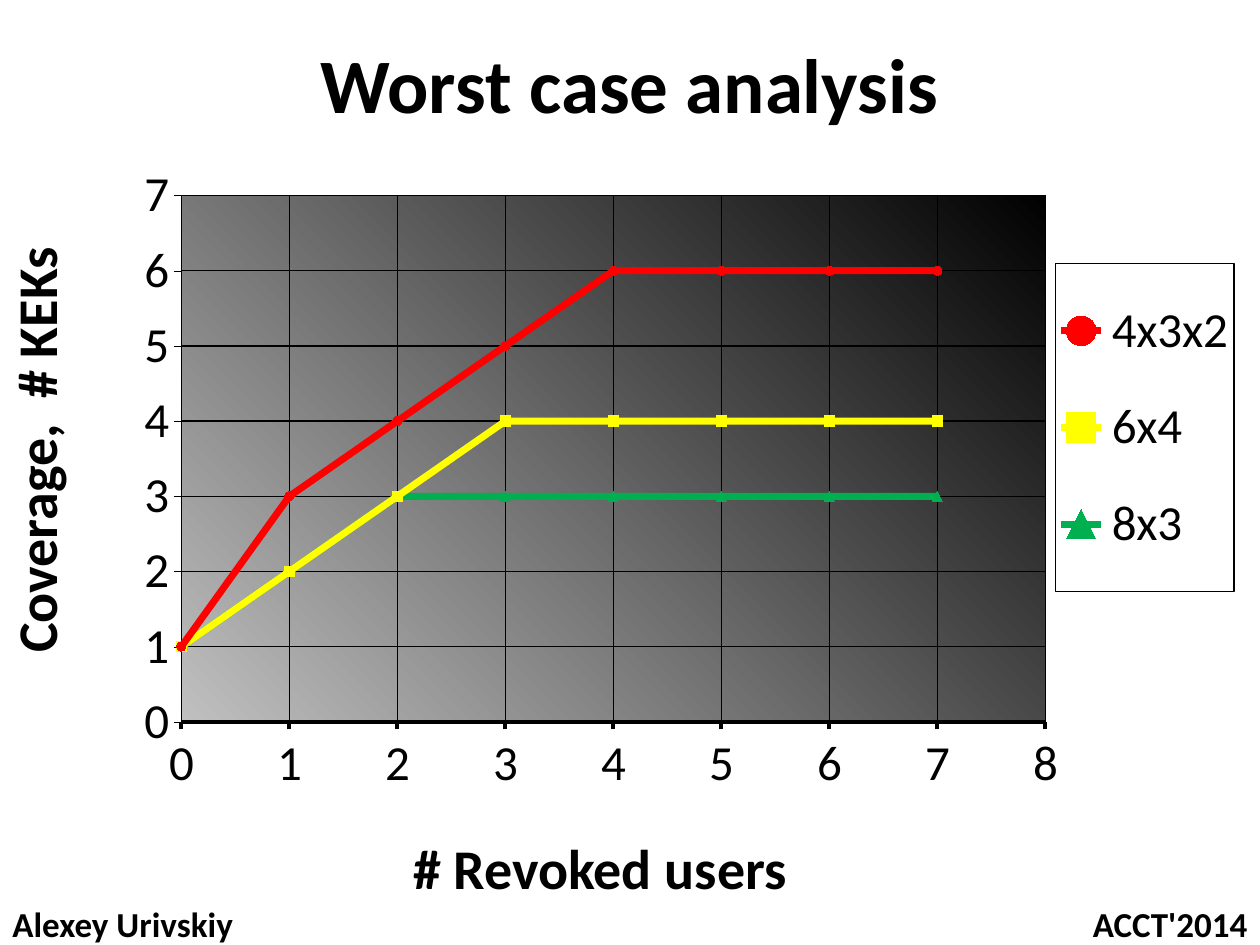
from pptx import Presentation
from pptx.chart.data import XyChartData
from pptx.dml.color import RGBColor
from pptx.enum.chart import (XL_CHART_TYPE, XL_LEGEND_POSITION,
                             XL_MARKER_STYLE, XL_TICK_LABEL_POSITION, XL_TICK_MARK)
from pptx.enum.text import MSO_ANCHOR, PP_ALIGN
from pptx.oxml import parse_xml
from pptx.oxml.ns import nsdecls, qn
from pptx.util import Inches, Pt

LEFT, CENTER, RIGHT = PP_ALIGN.LEFT, PP_ALIGN.CENTER, PP_ALIGN.RIGHT
TOP, MIDDLE = MSO_ANCHOR.TOP, MSO_ANCHOR.MIDDLE
CIRCLE, SQUARE, TRIANGLE = (XL_MARKER_STYLE.CIRCLE, XL_MARKER_STYLE.SQUARE,
                            XL_MARKER_STYLE.TRIANGLE)
FONT = "Calibri"
COLORS = {"black": "000000", "white": "FFFFFF", "red": "FF0000",
          "yellow": "FFFF00", "green": "00B050",
          "plot_light": "C0C0C0", "plot_dark": "010101"}

prs = Presentation()
prs.slide_width, prs.slide_height = Inches(10), Inches(7.5)
slide = prs.slides.add_slide(prs.slide_layouts[6])


def add_text(text, left, top, width, height, size=32, align=LEFT, anchor=TOP, vert=None):
    box = slide.shapes.add_textbox(Inches(left), Inches(top), Inches(width), Inches(height))
    frame = box.text_frame
    frame.word_wrap = True
    frame.vertical_anchor = anchor
    if vert:
        frame._txBody.bodyPr.set("vert", vert)
    paragraph = frame.paragraphs[0]
    paragraph.alignment = align
    run = paragraph.add_run()
    run.text = text
    run.font.name, run.font.size, run.font.bold = FONT, Pt(size), True
    run.font.color.rgb = RGBColor.from_string(COLORS["black"])


def manual_layout(x, y, w, h, target=""):
    return parse_xml(
        f'<c:layout {nsdecls("c")}><c:manualLayout>{target}'
        '<c:xMode val="edge"/><c:yMode val="edge"/>'
        f'<c:x val="{x}"/><c:y val="{y}"/><c:w val="{w}"/><c:h val="{h}"/>'
        '</c:manualLayout></c:layout>')


# Title
add_text("Worst case analysis", 0, 0.25, 10, 0.82, size=44, align=CENTER, anchor=MIDDLE)

# Chart data: coverage for 0, 1, 2, ... revoked users
coverage = [
    ("4x3x2", [1, 3, 4, 5, 6, 6, 6, 6], "red", CIRCLE, 5),
    ("6x4", [1, 2, 3, 4, 4, 4, 4, 4], "yellow", SQUARE, 6),
    ("8x3", [1, 2, 3, 3, 3, 3, 3, 3], "green", TRIANGLE, 6),
]
chart_data = XyChartData()
for name, keks, *_ in coverage:
    points = chart_data.add_series(name)
    for revoked, count in enumerate(keks):
        points.add_data_point(revoked, count)

chart = slide.shapes.add_chart(XL_CHART_TYPE.XY_SCATTER_LINES, Inches(0.16), Inches(0.8),
                               Inches(9.84), Inches(6.6), chart_data).chart
chart.has_title = False
chart.font.name, chart.font.size = FONT, Pt(28)
chart.font.color.rgb = RGBColor.from_string(COLORS["black"])
chart.plots[0].vary_by_categories = False

# Series lines and markers
for series, (_, _, color, marker, marker_size) in zip(chart.plots[0].series, coverage):
    rgb = RGBColor.from_string(COLORS[color])
    series.smooth = False
    series.format.line.color.rgb = rgb
    series.format.line.width = Pt(4)
    series.marker.style, series.marker.size = marker, marker_size
    series.marker.format.fill.solid()
    series.marker.format.fill.fore_color.rgb = rgb
    series.marker.format.line.color.rgb = rgb

# Axes and grid
for axis, maximum, axis_width, grid_width in [(chart.category_axis, 8, 2.18, 0.18),
                                              (chart.value_axis, 7, 0.18, 0.73)]:
    axis.minimum_scale, axis.maximum_scale, axis.major_unit = 0, maximum, 1
    axis.has_major_gridlines = True
    axis.major_tick_mark, axis.minor_tick_mark = XL_TICK_MARK.OUTSIDE, XL_TICK_MARK.NONE
    axis.tick_label_position = XL_TICK_LABEL_POSITION.NEXT_TO_AXIS
    axis.tick_labels.number_format = "General"
    axis.tick_labels.number_format_is_linked = False
    for line, width in [(axis.format.line, axis_width),
                        (axis.major_gridlines.format.line, grid_width)]:
        line.color.rgb = RGBColor.from_string(COLORS["black"])
        line.width = Pt(width)

# Plot area: position and diagonal gradient
plot_area = chart._chartSpace.find(".//" + qn("c:plotArea"))
for old_layout in plot_area.findall(qn("c:layout")):
    plot_area.remove(old_layout)
plot_area.insert(0, manual_layout(0.13, 0.114, 0.697, 0.633,
                                  '<c:layoutTarget val="inner"/>'))
plot_area.append(parse_xml(
    f'<c:spPr {nsdecls("c", "a")}><a:gradFill><a:gsLst>'
    f'<a:gs pos="0"><a:srgbClr val="{COLORS["plot_light"]}"/></a:gs>'
    f'<a:gs pos="100000"><a:srgbClr val="{COLORS["plot_dark"]}"/></a:gs>'
    '</a:gsLst><a:lin ang="18900000" scaled="0"/></a:gradFill></c:spPr>'))

# Legend: framed box on the right
chart.has_legend = True
chart.legend.position = XL_LEGEND_POSITION.RIGHT
chart.legend.include_in_layout = False
legend = chart._chartSpace.find(".//" + qn("c:legend"))
for old_layout in legend.findall(qn("c:layout")):
    legend.remove(old_layout)
legend.find(qn("c:legendPos")).addnext(manual_layout(0.835, 0.196, 0.144, 0.394))
legend.find(qn("c:overlay")).addnext(parse_xml(
    f'<c:spPr {nsdecls("c", "a")}>'
    f'<a:solidFill><a:srgbClr val="{COLORS["white"]}"/></a:solidFill>'
    f'<a:ln w="9525"><a:solidFill><a:srgbClr val="{COLORS["black"]}"/></a:solidFill></a:ln>'
    '</c:spPr>'))

# Axis captions
add_text("# Revoked users", 3.18, 6.57, 3.74, 0.64)
add_text("Coverage,  # KEKs", -0.04, 1.83, 0.74, 3.45, vert="vert270")

# Footer
add_text("Alexey Urivskiy", 0, 7.13, 5, 0.4, size=20, anchor=MIDDLE)
add_text("ACCT'2014", 5, 7.13, 5, 0.4, size=20, align=RIGHT, anchor=MIDDLE)

prs.save("out.pptx")
